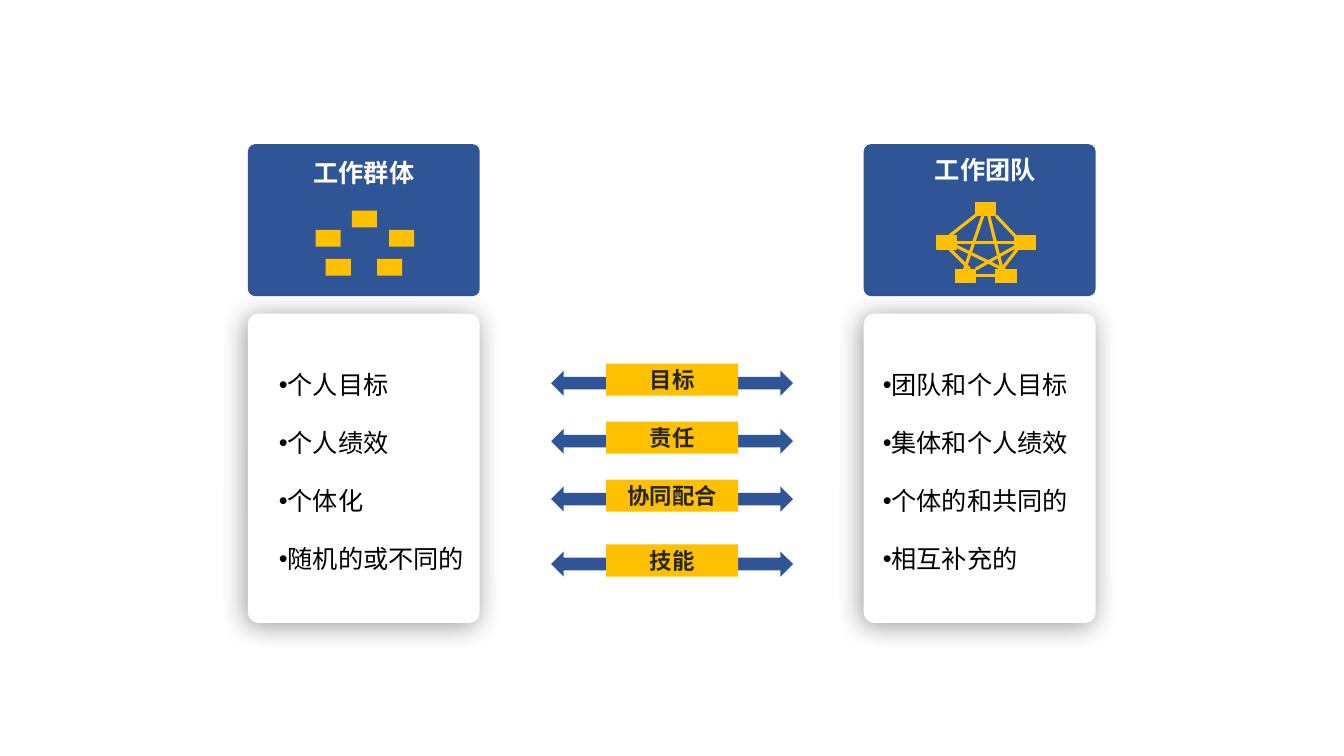
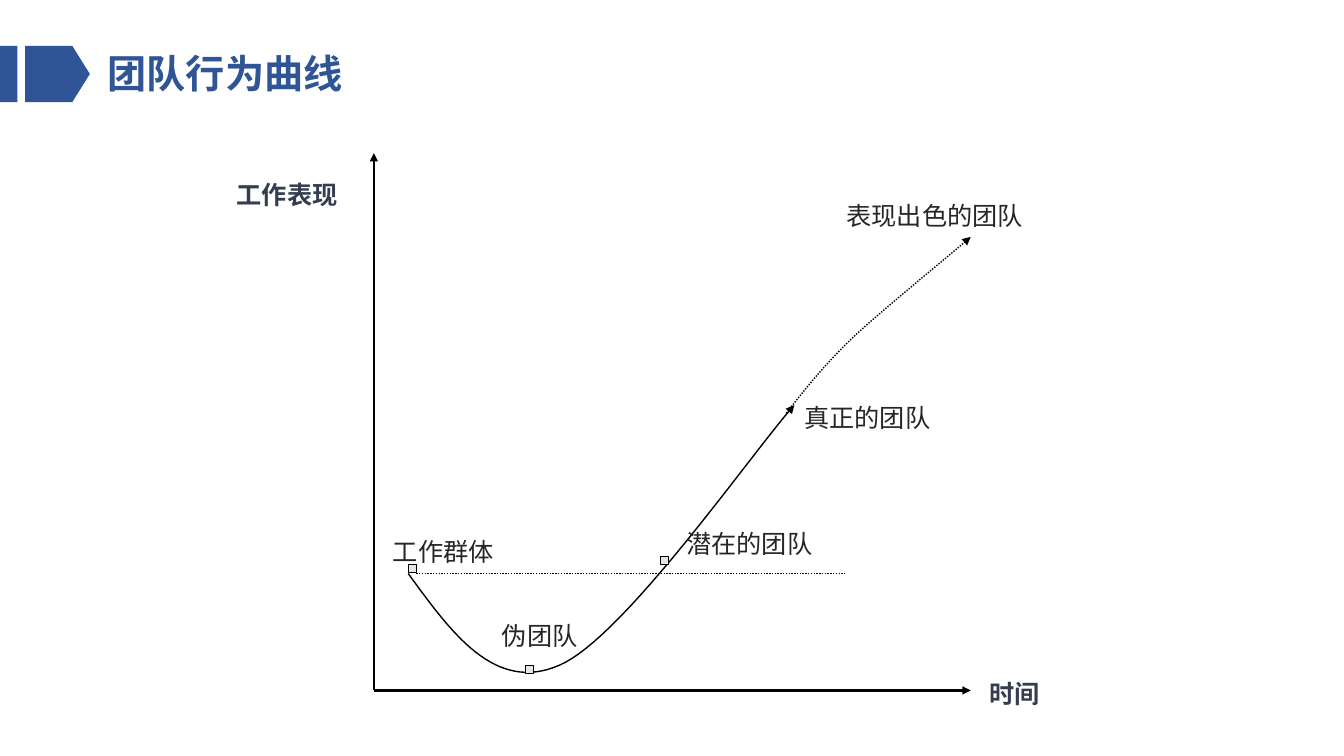
"""Build two slides on work groups, teams and the team behaviour curve."""
from dataclasses import dataclass

from lxml import etree
from pptx import Presentation
from pptx.dml.color import RGBColor
from pptx.enum.dml import MSO_LINE
from pptx.enum.shapes import MSO_CONNECTOR, MSO_SHAPE
from pptx.enum.text import MSO_ANCHOR, MSO_AUTO_SIZE, PP_ALIGN
from pptx.oxml.ns import qn
from pptx.util import Pt

RECT = MSO_SHAPE.RECTANGLE
ROUNDED = MSO_SHAPE.ROUNDED_RECTANGLE
PENTAGON = MSO_SHAPE.PENTAGON
PROCESS = MSO_SHAPE.FLOWCHART_PROCESS
TWO_WAY_ARROW = MSO_SHAPE.LEFT_RIGHT_ARROW
STRAIGHT = MSO_CONNECTOR.STRAIGHT
DOTTED = MSO_LINE.ROUND_DOT
MIDDLE = MSO_ANCHOR.MIDDLE
LEFT, CENTER = PP_ALIGN.LEFT, PP_ALIGN.CENTER
GROW = MSO_AUTO_SIZE.SHAPE_TO_FIT_TEXT


@dataclass(frozen=True)
class Theme:
    """Colours, font and type sizes shared by the slides."""
    blue: str = "2F5597"
    gold: str = "FFC000"
    white: str = "FFFFFF"
    black: str = "000000"
    ink: str = "262626"
    slate: str = "333F50"
    grey: str = "E7E6E6"
    font: str = "Noto Sans CJK SC"
    title: int = 28
    body: int = 18
    tag: int = 16


THEME = Theme()
BULLET_FORMAT = {"line_spacing": 1.5, "space_before": Pt(9)}
TITLE_FORMAT = {"line_spacing": 0.9}
TAG_FRAME = {"margin_left": 0, "margin_right": 0, "margin_top": 0,
             "margin_bottom": 0, "vertical_anchor": MIDDLE}
LABEL_HEIGHT = 28.8

CARD_LEFTS = (177.1, 617)
CARD_WIDTH = 165.6
HEADINGS = (("工作群体", 203, 108.7, 113.8), ("工作团队", 658.8, 106.6, 90))
TRAITS = (
    (192.2, 154.1, ("个人目标", "个人绩效", "个体化", "随机的或不同的")),
    (623.5, 198, ("团队和个人目标", "集体和个人绩效", "个体的和共同的", "相互补充的")),
)
MEMBERS = ((251.3, 150.5), (225.4, 164.2), (232.6, 185), (269.3, 185), (277.9, 164.2))
TEAM = {
    "top": (697, 144.7), "left": (668.9, 168.5), "right": (725, 168.5),
    "low_left": (682.6, 192.2), "low_right": (711.4, 192.2),
}
TEAM_LINKS = (
    ((678.2, 168.5), (702, 149.8)),
    ((711.4, 154.1), (725, 168.5)),
    (("low_left", 3), ("low_right", 1)),
    ((678.2, 177.8), (692.6, 192.2)),
    ((730.1, 173.5), (715.7, 192.2)),
    ((702, 154.1), (687.6, 196.6)),
    ((706.3, 154.1), (715.7, 192.2)),
    (("left", 3), (734.4, 173.2)),
    ((697, 192.2), (730.1, 173.5)),
    ((678.2, 173.5), ("low_right", 3)),
)
CONTRASTS = (("目标", 259.7), ("责任", 301.1), ("协同配合", 342.5), ("技能", 388.9))

STAGES = (
    ("工作群体", 273.6, 379.4, 120), ("潜在的团队", 483.1, 373.7, 174),
    ("真正的团队", 567.4, 283.7, 180), ("表现出色的团队", 597.6, 139.7, 198),
    ("伪团队", 351.4, 439.2, 96),
)
AXIS_NAMES = (("工作表现", 162, 124.6, 87.1), ("时间", 699.8, 481, 51.1))
ORIGIN = (267.1, 493.2)
AXIS_TIPS = ((267.1, 109.4), (693.4, 493.2))
MARKERS = ((PROCESS, 291.6, 403.2), (RECT, 375.1, 475.2), (RECT, 471.6, 397.4))
GROWTH_CURVE = ((291.6, 409.7), (322.6, 452.2), (353.5, 495.4), (399.6, 475.2),
                (445.7, 455.8), (539.3, 320.4), (567.4, 289.4))
OUTLOOK_CURVE = ((561.6, 295.2), (574.6, 278.6), (587.5, 262.1), (609.1, 241.2),
                 (631.4, 220.3), (679.7, 181.4), (693.4, 169.2))


def rgb(color):
    """Turn a hex string into a colour."""
    return RGBColor.from_string(color)


def apply_format(target, values):
    """Set each named attribute on the target."""
    for name, value in values.items():
        setattr(target, name, value)


def write(frame, lines, size, color, bold=False, align=LEFT, paragraph_format=None):
    """Fill a text frame with one paragraph per line."""
    font_format = {"size": Pt(size), "bold": bold, "name": THEME.font}
    for index, line in enumerate(lines):
        paragraph = frame.add_paragraph() if index else frame.paragraphs[0]
        paragraph.alignment = align
        apply_format(paragraph, paragraph_format or {})
        run = paragraph.add_run()
        run.text = line
        apply_format(run.font, font_format)
        run.font.color.rgb = rgb(color)
        east_asian = etree.SubElement(run.font._element, qn("a:ea"))
        east_asian.set("typeface", THEME.font)


def add_label(shapes, box, lines, size, color, wrap=True, **style):
    """Add a text box that grows with its text."""
    frame = shapes.add_textbox(*map(Pt, box)).text_frame
    apply_format(frame, {"word_wrap": wrap, "auto_size": GROW})
    write(frame, lines, size, color, **style)
    return frame


def add_block(shapes, kind, box, fill, outline=None, adjust=None):
    """Add a flat preset shape with an optional thin outline."""
    block = shapes.add_shape(kind, *map(Pt, box))
    block.shadow.inherit = False
    block.fill.solid()
    block.fill.fore_color.rgb = rgb(fill)
    if outline:
        style_line(block.line, outline, 0.75)
    else:
        block.line.fill.background()
    if adjust is not None:
        block.adjustments[0] = adjust
    return block


def style_line(line, color, width, dash=None, arrow=False):
    """Set colour, width, dash and arrowhead of a line."""
    line.color.rgb = rgb(color)
    line.width = Pt(width)
    if dash:
        line.dash_style = dash
    if arrow:
        tail = etree.SubElement(line._get_or_add_ln(), qn("a:tailEnd"))
        tail.set("type", "triangle")


def add_link(shapes, start, end, color, width, nodes=None, **style):
    """Add a straight line between points or (node, side) joins."""
    joined_start, joined_end = (isinstance(spot[0], str) for spot in (start, end))
    begin = (0, 0) if joined_start else start
    finish = (0, 0) if joined_end else end
    link = shapes.add_connector(STRAIGHT, *map(Pt, (*begin, *finish)))
    if joined_start:
        link.begin_connect(nodes[start[0]], start[1])
    if joined_end:
        link.end_connect(nodes[end[0]], end[1])
    style_line(link.line, color, width, **style)
    etree.SubElement(link._element.spPr, qn("a:effectLst"))


def curve_points(controls, steps=32):
    """Sample a chain of cubic curves that share their end points."""
    points = [controls[0]]
    for first in range(0, len(controls) - 1, 3):
        segment = controls[first:first + 4]
        for step in range(1, steps + 1):
            t = step / steps
            weights = ((1 - t) ** 3, 3 * t * (1 - t) ** 2, 3 * t * t * (1 - t), t ** 3)
            points.append(tuple(sum(w * p[axis] for w, p in zip(weights, segment))
                                for axis in (0, 1)))
    return points


def add_curve(shapes, controls, dash=None):
    """Add an open curve that ends in an arrowhead."""
    start, *rest = [tuple(map(Pt, point)) for point in curve_points(controls)]
    builder = shapes.build_freeform(*start)
    builder.add_line_segments(rest, close=False)
    curve = builder.convert_to_shape()
    curve.shadow.inherit = False
    curve.fill.background()
    style_line(curve.line, THEME.black, 1, dash=dash, arrow=True)


def add_soft_shadow(card):
    """Give a card a soft shadow to the lower left."""
    effects = card._element.spPr.find(qn("a:effectLst"))
    shadow = etree.SubElement(effects, qn("a:outerShdw"))
    values = {"blurRad": Pt(19), "dist": Pt(3), "dir": 135 * 60000,
              "algn": "tr", "rotWithShape": 0}
    for name, value in values.items():
        shadow.set(name, str(int(value)) if name != "algn" else value)
    color = etree.SubElement(shadow, qn("a:srgbClr"), val=THEME.black)
    etree.SubElement(color, qn("a:alpha"), val="40000")


def add_bullets(shapes, left, width, traits):
    """Add a list whose bullets sit directly before the text."""
    frame = add_label(shapes, (left, 249.8, width, 168), traits, THEME.body,
                      THEME.black, paragraph_format=BULLET_FORMAT)
    for paragraph in frame.paragraphs:
        properties = paragraph._p.get_or_add_pPr()
        properties.set("marL", "0")
        properties.set("indent", "0")
        etree.SubElement(properties, qn("a:buFont"), typeface="Arial")
        etree.SubElement(properties, qn("a:buChar"), char="•")


def add_team_network(shapes):
    """Add the group of fully linked team members."""
    network = shapes.add_group_shape().shapes
    nodes = {name: add_block(network, RECT, (*corner, 14.4, 9.4), THEME.gold, THEME.gold)
             for name, corner in TEAM.items()}
    for start, end in TEAM_LINKS:
        add_link(network, start, end, THEME.gold, 2.25, nodes=nodes)


def add_contrast(shapes, topic, top):
    """Add a two-way arrow with its topic tag."""
    add_block(shapes, TWO_WAY_ARROW, (393.7, top + 5, 172.8, 18), THEME.blue)
    tag = add_block(shapes, RECT, (432.9, top, 94.3, 23), THEME.gold)
    apply_format(tag.text_frame, TAG_FRAME)
    write(tag.text_frame, [topic], THEME.tag, THEME.ink, bold=True, align=CENTER)


def add_title(shapes, title):
    """Add the title with its blue band at the left edge."""
    frame = add_label(shapes, (69.8, 35.3, 204.5, 38.2), [title], THEME.title, THEME.blue,
                      bold=True, paragraph_format=TITLE_FORMAT)
    frame.vertical_anchor = MIDDLE
    add_block(shapes, RECT, (0, 32.7, 12.5, 40.3), THEME.blue)
    add_block(shapes, PENTAGON, (18, 32.7, 46.2, 40.3), THEME.blue, adjust=0.312)


def build_comparison(shapes):
    """Compare a work group with a work team."""
    for left in CARD_LEFTS:
        add_block(shapes, ROUNDED, (left, 103, CARD_WIDTH, 108.5), THEME.blue, adjust=0.047)
        add_soft_shadow(add_block(shapes, ROUNDED, (left, 224, CARD_WIDTH, 221),
                                  THEME.white, adjust=0.047))
    for heading, *corner_width in HEADINGS:
        add_label(shapes, (*corner_width, LABEL_HEIGHT), [heading], THEME.body,
                  THEME.white, bold=True, align=CENTER)
    for corner in MEMBERS:
        add_block(shapes, RECT, (*corner, 18, 12), THEME.gold)
    add_team_network(shapes)
    for left, width, traits in TRAITS:
        add_bullets(shapes, left, width, traits)
    for topic, top in CONTRASTS:
        add_contrast(shapes, topic, top)


def build_behaviour_curve(shapes):
    """Plot performance over time from work group to strong team."""
    add_title(shapes, "团队行为曲线")
    add_link(shapes, (297.4, 409.7), (603.4, 409.7), THEME.black, 1, dash=DOTTED)
    add_curve(shapes, GROWTH_CURVE)
    add_curve(shapes, OUTLOOK_CURVE, dash=DOTTED)
    for kind, left, top in MARKERS:
        add_block(shapes, kind, (left, top, 6, 6), THEME.grey, THEME.black)
    for stage, *corner_width in STAGES:
        add_label(shapes, (*corner_width, LABEL_HEIGHT), [stage], THEME.body, THEME.ink)
    for tip in AXIS_TIPS:
        add_link(shapes, ORIGIN, tip, THEME.black, 1.5, arrow=True)
    for name, *corner_width in AXIS_NAMES:
        add_label(shapes, (*corner_width, LABEL_HEIGHT), [name], THEME.body, THEME.slate,
                  wrap=False, bold=True)


def main():
    """Create and save the presentation."""
    presentation = Presentation()
    apply_format(presentation, {"slide_width": Pt(960), "slide_height": Pt(540)})
    for build in (build_comparison, build_behaviour_curve):
        build(presentation.slides.add_slide(presentation.slide_layouts[6]).shapes)
    presentation.save("out.pptx")


if __name__ == "__main__":
    main()
